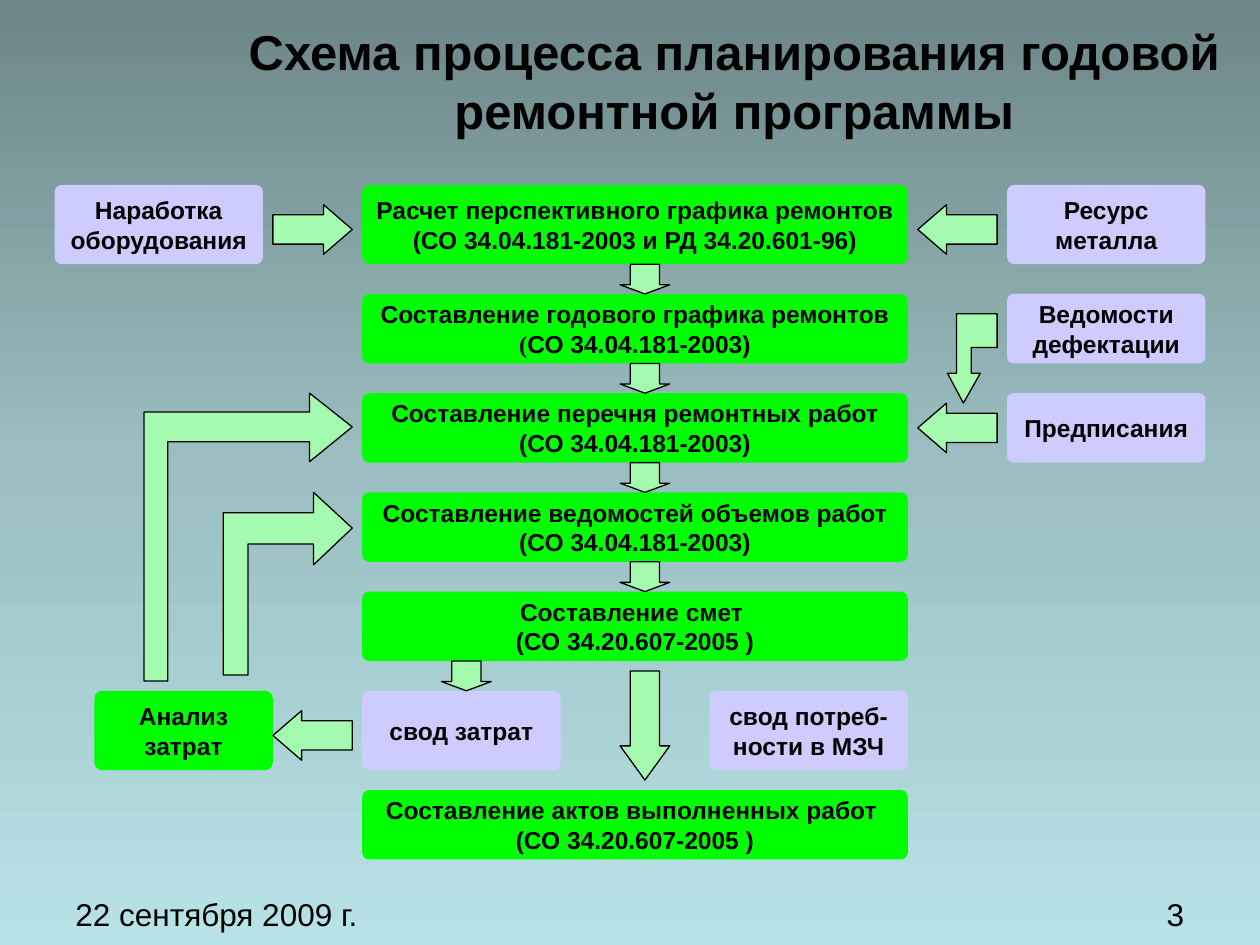
from copy import deepcopy
from pptx import Presentation
from pptx.dml.color import RGBColor
from pptx.enum.shapes import MSO_SHAPE
from pptx.enum.text import MSO_ANCHOR, PP_ALIGN
from pptx.oxml.ns import qn
from pptx.util import Inches, Mm, Pt

CELL = Mm(2)
LEFT, TOP = Inches(0.04), Inches(0.05)
GREEN, LILAC, MINT, BLACK = "00FF00", "CCCCFF", "A4FAAE", "000000"


def paint(shape, fill, line=None):
    shape.shadow.inherit = False
    shape.fill.solid()
    shape.fill.fore_color.rgb = RGBColor.from_string(fill)
    if line:
        shape.line.color.rgb = RGBColor.from_string(line)
        shape.line.width = Pt(0.75)
    else:
        shape.line.fill.background()


def write(shape, text, size, bold, align, anchor):
    frame = shape.text_frame
    frame.word_wrap = True
    frame.vertical_anchor = anchor
    frame.text = text
    for paragraph in frame.paragraphs:
        paragraph.alignment = align
        for run in paragraph.runs:
            run.font.name = "Arial"
            run.font.size = Pt(size)
            run.font.bold = bold
            run.font.color.rgb = RGBColor.from_string(BLACK)


deck = Presentation()
deck.slide_width, deck.slide_height = Inches(10), Inches(7.5)
slide = deck.slides.add_slide(deck.slide_layouts[6])

backdrop = slide.background.fill
backdrop.gradient()
backdrop.gradient_angle = 270
stop_list = next(slide.element.iter(qn("a:gsLst")))
stop_list.append(deepcopy(stop_list[-1]))
for stop, (position, color) in zip(
    backdrop.gradient_stops, [(0, "6D8688"), (0.5, "9BBFC2"), (1, "B8E3E6")]
):
    stop.position = position
    stop.color.rgb = RGBColor.from_string(color)

captions = [
    ("22 сентября 2009 г.", 5.85, 89, 37.2, 3.7, 18, False, PP_ALIGN.LEFT, MSO_ANCHOR.TOP),
    ("3", 106, 89, 14.1, 3.7, 18, False, PP_ALIGN.RIGHT, MSO_ANCHOR.TOP),
    ("Схема процесса планирования годовой ремонтной программы",
     23, 2, 101, 11, 28, True, PP_ALIGN.CENTER, MSO_ANCHOR.MIDDLE),
]
for text, col, row, cols, rows, size, bold, align, anchor in captions:
    caption = slide.shapes.add_textbox(
        LEFT + int(col * CELL), TOP + int(row * CELL), int(cols * CELL), int(rows * CELL)
    )
    write(caption, text, size, bold, align, anchor)

steps = [
    ("Расчет перспективного графика ремонтов (СО 34.04.181-2003 и РД 34.20.601-96)", 36, 18, 55, 8, GREEN),
    ("Составление годового графика ремонтов (СО 34.04.181-2003)", 36, 29, 55, 7, GREEN),
    ("Составление перечня ремонтных работ (СО 34.04.181-2003)", 36, 39, 55, 7, GREEN),
    ("Составление ведомостей объемов работ (СО 34.04.181-2003)", 36, 49, 55, 7, GREEN),
    ("Составление смет \n(СО 34.20.607-2005 )", 36, 59, 55, 7, GREEN),
    ("Составление актов выполненных работ \n(СО 34.20.607-2005 )", 36, 79, 55, 7, GREEN),
    ("Анализ затрат", 9, 69, 18, 8, GREEN),
    ("Наработка оборудования", 5, 18, 21, 8, LILAC),
    ("Ресурс металла", 101, 18, 20, 8, LILAC),
    ("Ведомости дефектации", 101, 29, 20, 7, LILAC),
    ("Предписания", 101, 39, 20, 7, LILAC),
    ("свод затрат", 36, 69, 20, 8, LILAC),
    ("свод потреб-ности в МЗЧ", 71, 69, 20, 8, LILAC),
]
for text, col, row, cols, rows, color in steps:
    step = slide.shapes.add_shape(
        MSO_SHAPE.ROUNDED_RECTANGLE, LEFT + col * CELL, TOP + row * CELL, cols * CELL, rows * CELL
    )
    step.adjustments[0] = 0.1 if color == GREEN else 0.09
    paint(step, color)
    write(step, text, 14, True, PP_ALIGN.CENTER, MSO_ANCHOR.MIDDLE)
    if color == GREEN:
        step.text_frame.margin_left = step.text_frame.margin_right = Inches(0.02)
    if "годового" in text:
        name_run = step.text_frame.paragraphs[0].runs[0]
        for _ in range(2):
            name_run._r.addnext(deepcopy(name_run._r))
        name_run, bracket, standard = step.text_frame.paragraphs[0].runs
        name_run.text, bracket.text, standard.text = text.partition("(")
        bracket.font.name = "Times New Roman"

arrows = [(MSO_SHAPE.DOWN_ARROW, 62, row, 5, 3, 0.31) for row in (26, 36, 46, 56)]
arrows += [
    (MSO_SHAPE.DOWN_ARROW, 44, 66, 5, 3, 0.31),
    (MSO_SHAPE.DOWN_ARROW, 62, 67, 5, 11, 0.69),
    (MSO_SHAPE.RIGHT_ARROW, 27, 20, 8, 5, 0.58),
    (MSO_SHAPE.LEFT_ARROW, 27, 71, 8, 5, 0.58),
    (MSO_SHAPE.LEFT_ARROW, 92, 20, 8, 5, 0.58),
    (MSO_SHAPE.LEFT_ARROW, 92, 40, 8, 5, 0.58),
]
for direction, col, row, cols, rows, head in arrows:
    arrow = slide.shapes.add_shape(
        direction, LEFT + col * CELL, TOP + row * CELL, cols * CELL, rows * CELL
    )
    arrow.adjustments[0], arrow.adjustments[1] = 0.59, head
    paint(arrow, MINT, BLACK)

bent_arrows = [
    [(35, 52.6), (31.1, 56.3), (31.1, 54.2), (24.5, 54.2), (24.5, 67.4),
     (22, 67.4), (22, 51.05), (31.1, 51.05), (31.1, 49)],
    [(35, 42.4), (30.7, 45.9), (30.7, 43.9), (16.4, 43.9), (16.4, 68),
     (14, 68), (14, 40.9), (30.7, 40.9), (30.7, 39)],
    [(96.6, 40), (98.3, 37), (97.4, 37), (97.4, 34.4), (100, 34.4),
     (100, 31), (95.9, 31), (95.9, 37), (95, 37)],
]
for outline in bent_arrows:
    corners = [(LEFT + int(col * CELL), TOP + int(row * CELL)) for col, row in outline]
    builder = slide.shapes.build_freeform(*corners[0])
    builder.add_line_segments(corners[1:], close=True)
    paint(builder.convert_to_shape(), MINT, BLACK)

deck.save("out.pptx")
